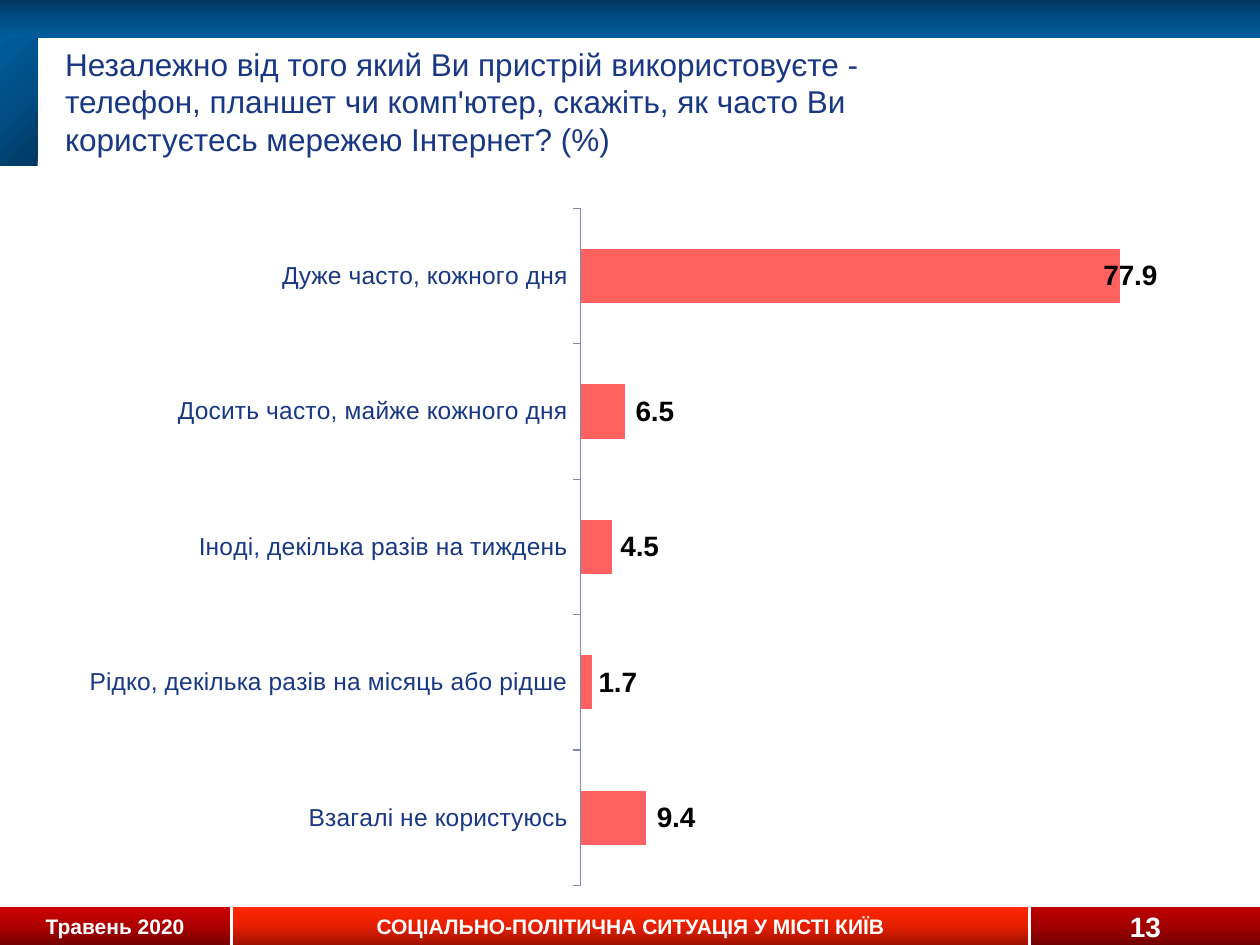
"""Build a survey slide with a bar chart of how often people use the Internet."""
from copy import deepcopy
from dataclasses import dataclass

from pptx import Presentation
from pptx.chart.data import CategoryChartData
from pptx.dml.color import RGBColor
from pptx.enum import chart as ch, shapes, text
from pptx.oxml import parse_xml
from pptx.oxml.ns import nsdecls, qn
from pptx.util import Pt


@dataclass(frozen=True)
class Theme:
    font: str = "Arial"
    navy: str = "183883"
    white: str = "FFFFFF"
    black: str = "000000"
    bar: str = "FF6161"
    axis: str = "8088B0"
    blue: tuple = ("00375E", "004E85", "005D9E")
    dark: tuple = ("770000", "AD0000", "CE0000")
    red: tuple = ("A01200", "E61F00", "FF2800")
    deep: tuple = ("720000", "A20000", "C00000")
    title: int = 18
    label: int = 16
    cats: int = 14
    foot: int = 12


theme = Theme()


def style(font, size, color, bold=False):
    font.name, font.size, font.bold = theme.font, Pt(size), bold
    font.color.rgb = RGBColor.from_string(color)


def layout(inner, **parts):
    body = "".join(f'<c:{key} val="{val}"/>' for key, val in parts.items())
    return parse_xml(
        f'<c:layout {nsdecls("c")}><c:manualLayout>{inner}{body}</c:manualLayout></c:layout>'
    )


deck = Presentation()
deck.slide_width, deck.slide_height = Pt(720), Pt(540)
slide = deck.slides.add_slide(deck.slide_layouts[5])

bands = [
    (0, 518.4, 131.5, 21.6, theme.dark, 90, "Травень 2020", theme.foot),
    (133.2, 518.4, 454.3, 21.6, theme.red, 90,
     "СОЦІАЛЬНО-ПОЛІТИЧНА СИТУАЦІЯ У МІСТІ КИЇВ", theme.foot),
    (589, 518.4, 131, 21.6, theme.deep, 90, "13", theme.label),
    (0, 0, 720, 21.6, theme.blue, 270, "", theme.foot),
    (0, 21.2, 21.6, 73.5, theme.blue, 135, "", theme.foot),
]
for left, top, width, height, shades, angle, words, size in bands:
    band = slide.shapes.add_shape(
        shapes.MSO_SHAPE.RECTANGLE, Pt(left), Pt(top), Pt(width), Pt(height))
    band.shadow.inherit = False
    band.line.fill.background()
    band.fill.gradient()
    band.fill.gradient_angle = angle
    stops = band.element.spPr.find(".//" + qn("a:gsLst"))
    stops.insert(1, deepcopy(stops[0]))
    for stop, shade, place in zip(band.fill.gradient_stops, shades, (0, 0.5, 1)):
        stop.color.rgb = RGBColor.from_string(shade)
        stop.position = place
    if words:
        frame = band.text_frame
        frame.word_wrap = True
        frame.vertical_anchor = text.MSO_ANCHOR.MIDDLE
        para = frame.paragraphs[0]
        para.alignment = text.PP_ALIGN.CENTER
        run = para.add_run()
        run.text = words
        style(run.font, size, theme.white, True)

title = slide.shapes.title
title.left, title.top, title.width, title.height = Pt(21.6), Pt(21.6), Pt(544.3), Pt(72.7)
frame = title.text_frame
frame.word_wrap = True
frame.auto_size = text.MSO_AUTO_SIZE.NONE
frame.vertical_anchor = text.MSO_ANCHOR.MIDDLE
frame.margin_left, frame.margin_right = Pt(15.6), Pt(7.2)
frame.margin_top = frame.margin_bottom = Pt(3.6)
para = frame.paragraphs[0]
para.alignment = text.PP_ALIGN.LEFT
run = para.add_run()
run.text = ("Незалежно від того який Ви пристрій використовуєте - телефон, планшет "
            "чи комп'ютер, скажіть, як часто Ви користуєтесь мережею Інтернет? (%)")
style(run.font, theme.title, theme.navy)

rows = [
    ("Взагалі не користуюсь", 9.4, 0.045),
    ("Рідко, декілька разів на місяць або рідше", 1.7, 0.041),
    ("Іноді, декілька разів на тиждень", 4.5, 0.043),
    ("Досить часто, майже кожного дня", 6.5, 0.044),
    ("Дуже часто, кожного дня", 77.9, 0.035),
]
names, vals, shifts = zip(*rows)
data = CategoryChartData(number_format="###0.0")
data.categories = names
data.add_series("Series 1", vals)
chart = slide.shapes.add_chart(
    ch.XL_CHART_TYPE.BAR_STACKED, Pt(19.4), Pt(106.6), Pt(692.6), Pt(400.3), data).chart
style(chart.font, theme.title, theme.navy)
chart.has_legend = chart.has_title = False

area = chart.element.find(".//" + qn("c:plotArea"))
for old in area.findall(qn("c:layout")):
    area.remove(old)
area.insert(0, layout('<c:layoutTarget val="inner"/>', xMode="edge", yMode="edge",
                      x=0.451, y=0.031, w=0.514, h=0.967))

axis = chart.category_axis
axis.major_tick_mark = ch.XL_TICK_MARK.OUTSIDE
axis.format.line.color.rgb = RGBColor.from_string(theme.axis)
axis.format.line.width = Pt(0.75)
style(axis.tick_labels.font, theme.cats, theme.navy)
scale = chart.value_axis
scale.minimum_scale, scale.maximum_scale = 0, 90
scale.has_major_gridlines = False
scale.visible = False

plot = chart.plots[0]
plot.gap_width, plot.overlap = 150, 100
plot.vary_by_categories = False
bars = plot.series[0]
bars.format.fill.solid()
bars.format.fill.fore_color.rgb = RGBColor.from_string(theme.bar)
labels = bars.data_labels
labels.show_value = True
labels.number_format, labels.number_format_is_linked = "###0.0", False
labels.position = ch.XL_LABEL_POSITION.INSIDE_END
style(labels.font, theme.label, theme.black, True)
for spot in range(len(rows)):
    label = bars.points[spot].data_label
    label.position = ch.XL_LABEL_POSITION.INSIDE_END
    style(label.font, theme.label, theme.black, True)
for node, shift in zip(chart.element.iter(qn("c:dLbl")), shifts):
    node.insert(1, layout("", x=shift, y=0))

deck.save("out.pptx")
